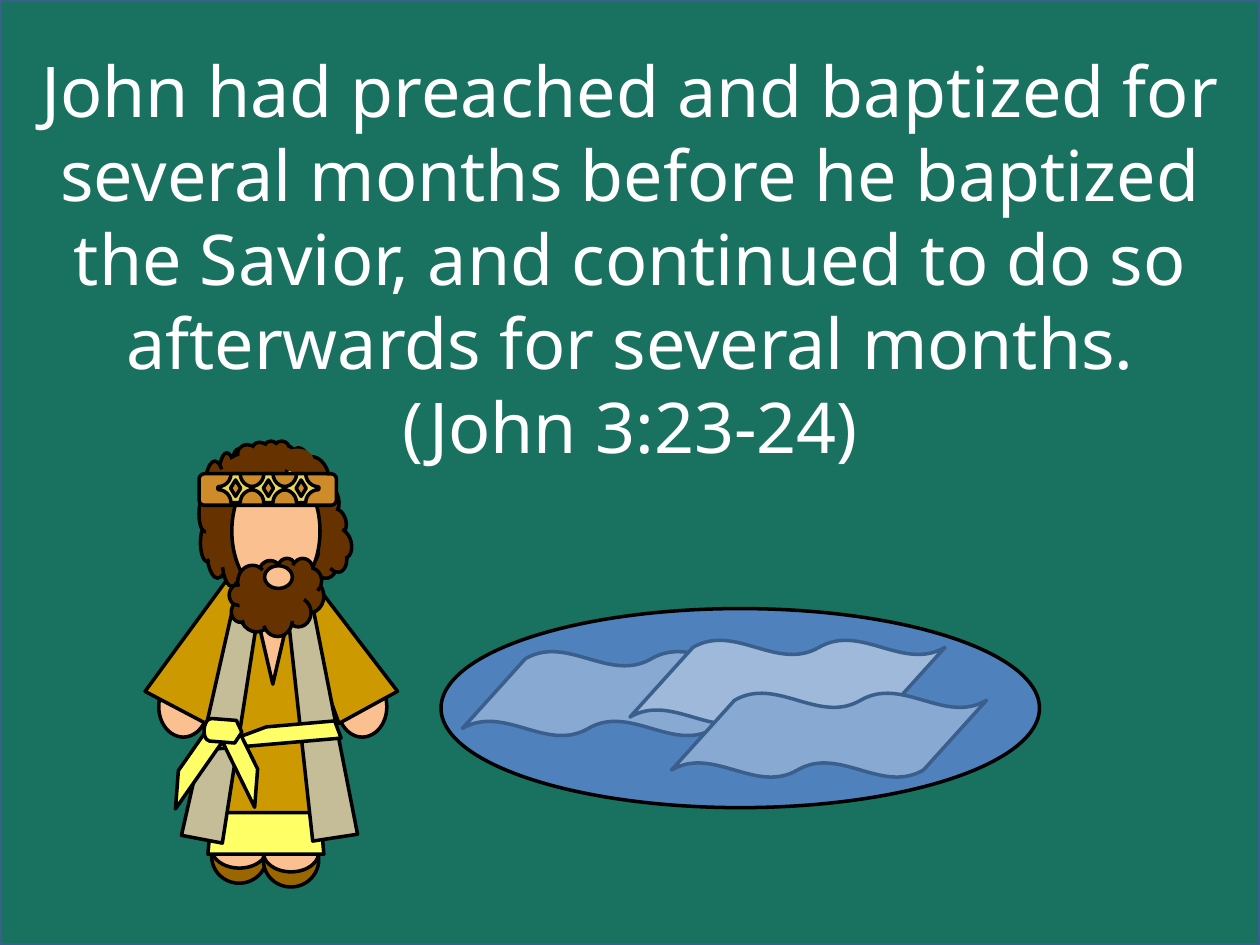
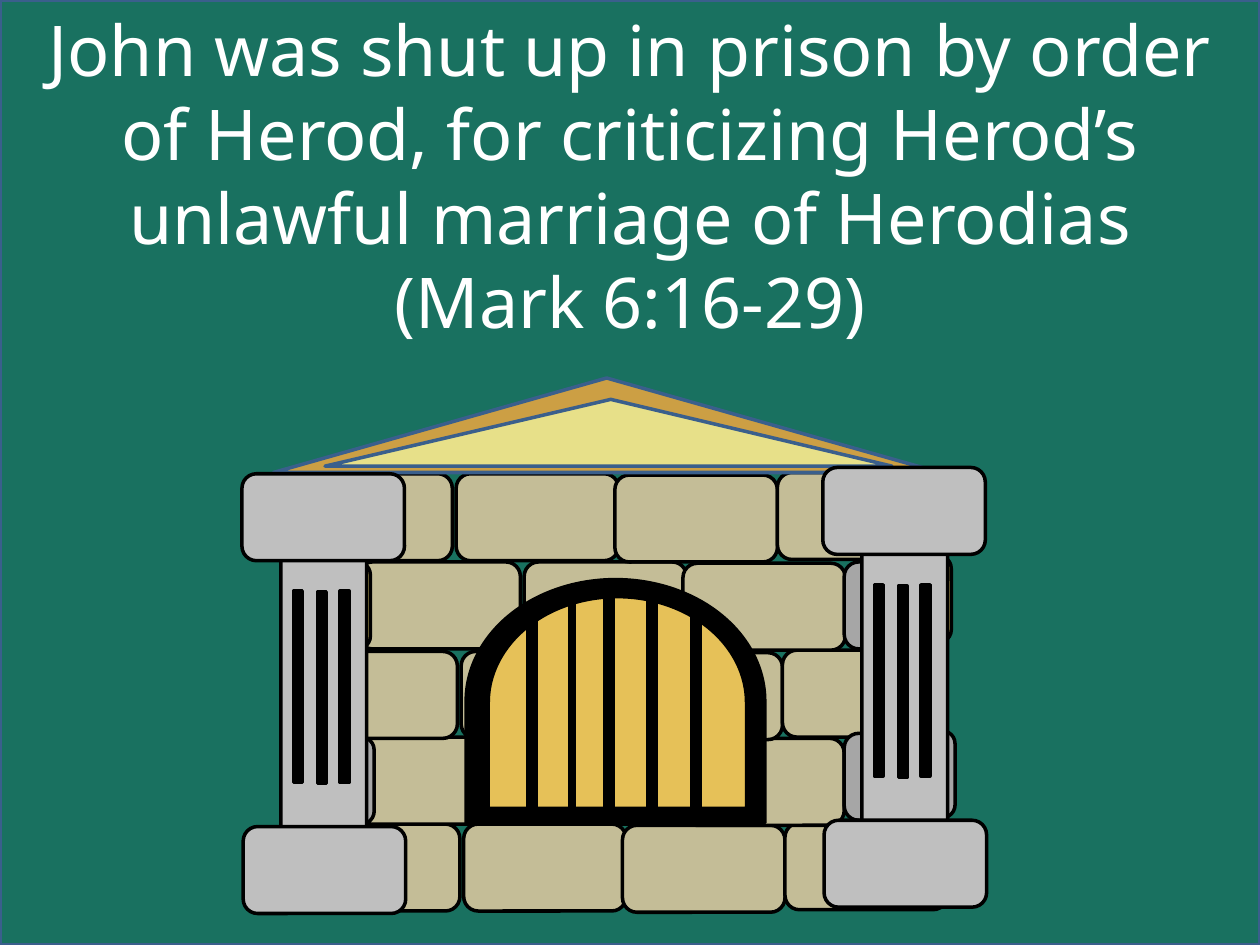
"""Build two Bible story slides about John: baptizing, and shut up in prison."""
import pptx
import pptx.dml.color
import pptx.enum.shapes
import pptx.enum.text
import pptx.util

Inches = pptx.util.Inches
KIND = pptx.enum.shapes.MSO_SHAPE
COLORS = {
    "board": "197160", "edge": "3A5F8C", "black": "000000", "white": "FFFFFF",
    "water": "4F81BD", "wave": "88A9D2", "crest": "9EB9DA",
    "skin": "FAC090", "sandal": "996600", "robe": "CC9900", "sash": "FFFF66",
    "hair": "663300", "stone": "C4BD97", "band": "CD8B29", "gem": "E7D65B",
    "shade": "A6A6A6", "pillar": "BFBFBF", "glow": "E6C158", "amber": "EAD26C",
    "roof": "CC9F44", "gable": "E7E089",
}
FONT = "Noto Sans"


def add_shape(shapes, kind, left, top, width, height, fill, line="black",
              turn=0, flip=False, adjust=()):
    shape = shapes.add_shape(kind, Inches(left), Inches(top), Inches(width), Inches(height))
    shape.shadow.inherit = False
    shape.fill.solid()
    shape.fill.fore_color.rgb = pptx.dml.color.RGBColor.from_string(COLORS[fill])
    if line:
        shape.line.color.rgb = pptx.dml.color.RGBColor.from_string(COLORS[line])
        shape.line.width = pptx.util.Pt(2)
    else:
        shape.line.fill.background()
    shape.rotation = turn
    if flip:
        shape.element.spPr.xfrm.set("flipH", "1")
    for index, value in enumerate(adjust):
        shape.adjustments[index] = value


def add_text(page, lines, top, height, size=40, color="white"):
    box = page.shapes.add_textbox(0, Inches(top), Inches(10), Inches(height))
    frame = box.text_frame
    frame.word_wrap = True
    frame.auto_size = pptx.enum.text.MSO_AUTO_SIZE.SHAPE_TO_FIT_TEXT
    for index, line in enumerate(lines):
        para = frame.add_paragraph() if index else frame.paragraphs[0]
        para.alignment = pptx.enum.text.PP_ALIGN.CENTER
        span = para.add_run()
        span.text = line
        span.font.size = pptx.util.Pt(size)
        span.font.name = FONT
        span.font.color.rgb = pptx.dml.color.RGBColor.from_string(COLORS[color])


deck = pptx.Presentation()
deck.slide_width = Inches(10)
deck.slide_height = Inches(7.5)

stories = [
    (["John had preached and baptized for several months before he baptized "
      "the Savior, and continued to do so afterwards for several months.",
      "(John 3:23-24)"], 0.33, 3.47),
    (["John was shut up in prison by order of Herod, for criticizing Herod’s "
      "unlawful marriage of Herodias",
      "(Mark 6:16-29)"], 0, 2.79),
]
pages = []
for lines, top, height in stories:
    page = deck.slides.add_slide(deck.slide_layouts[6])
    add_shape(page.shapes, KIND.RECTANGLE, 0, 0, 10, 7.5, "board", line="edge")
    add_text(page, lines, top, height)
    pages.append(page)
river_page, prison_page = pages

add_shape(river_page.shapes, KIND.OVAL, 3.5, 4.83, 4.75, 1.58, "water")
for left, top, fill in [(3.67, 5.17, "wave"), (5, 5.08, "crest"), (5.33, 5.5, "wave")]:
    add_shape(river_page.shapes, KIND.DOUBLE_WAVE, left, top, 2.5, 0.67, fill,
              line="edge", adjust=(0.087, -0.1))

john = river_page.shapes.add_group_shape().shapes
for left in (2.68, 1.26):
    add_shape(john, KIND.OVAL, left, 5.37, 0.39, 0.48, "skin")
for left, top in [(1.68, 6.58), (2.09, 6.61)]:
    add_shape(john, KIND.OVAL, left, top, 0.44, 0.43, "sandal", turn=351.2)
    add_shape(john, KIND.OVAL, left, top, 0.44, 0.31, "skin")

garments = [
    (1.65, 6.01, 0.92, 0.77, "sash", 0, 0.087),
    (2.36, 4.45, 0.53, 1.24, "robe", 331.3, 0.36),
    (1.44, 4.32, 0.57, 1.38, "robe", 27.8, 0.36),
    (1.65, 4.46, 1.03, 1.99, "robe", 0, 0.36),
]
for left, top, width, height, fill, turn, slant in garments:
    add_shape(john, KIND.TRAPEZOID, left, top, width, height, fill, turn=turn, adjust=(slant,))
add_shape(john, KIND.ISOSCELES_TRIANGLE, 1.97, 4.59, 0.39, 0.84, "skin", turn=180)
add_shape(john, KIND.CLOUD, 1.94, 3.82, 1.06, 0.51, "hair", turn=76.1)
add_shape(john, KIND.CLOUD, 1.58, 3.56, 0.51, 1.09, "hair")
add_shape(john, KIND.OVAL, 2.07, 4.4, 0.35, 0.44, "skin")
add_shape(john, KIND.TRAPEZOID, 1.64, 4.52, 0.33, 2.16, "stone", turn=10.8, adjust=(0.221,))
add_shape(john, KIND.TRAPEZOID, 2.32, 4.54, 0.36, 2.12, "stone", turn=351.3, adjust=(0.25,))

sash_strips = [
    (1.64, 5.76, 1.05, 0.29, 339.6, True),
    (1.29, 5.95, 0.61, 0.36, 274.4, True),
    (1.56, 5.91, 0.61, 0.36, 94.4, False),
]
for left, top, width, height, turn, flip in sash_strips:
    add_shape(john, KIND.DIAGONAL_STRIPE, left, top, width, height, "sash", turn=turn, flip=flip)
add_shape(john, KIND.FLOWCHART_DISPLAY, 1.62, 5.71, 0.3, 0.18, "sash", turn=4.4, flip=True)

add_shape(john, KIND.OVAL, 1.84, 3.69, 0.7, 1.05, "skin")
add_shape(john, KIND.CLOUD, 1.82, 4.43, 0.75, 0.62, "hair")
add_shape(john, KIND.OVAL, 2.1, 4.49, 0.22, 0.18, "skin")
add_shape(john, KIND.CLOUD, 1.84, 3.5, 0.51, 0.32, "hair")
for left, top in [(1.78, 3.63), (2.23, 3.56)]:
    add_shape(john, KIND.OVAL, left, top, 0.26, 0.19, "hair", line=None)
add_shape(john, KIND.ROUNDED_RECTANGLE, 1.58, 3.76, 1.09, 0.25, "band")
for gem in range(3):
    left = 1.73 + 0.26 * gem
    add_shape(john, KIND.PLAQUE, left, 3.76, 0.28, 0.23, "gem", adjust=(0.45,))
    add_shape(john, KIND.DIAMOND, left + 0.1, 3.81, 0.08, 0.13, "band")

prison = prison_page.shapes.add_group_shape().shapes
brick_offsets = [(0, 0), (1.32, 0), (2.58, 0.01), (3.87, -0.01)]
brick_rows = [(2.36, 6.54, 4), (2.83, 5.85, 3), (2.34, 5.17, 4), (2.84, 4.46, 3), (2.3, 3.76, 4)]
for row_left, row_top, count in brick_rows:
    for across, down in brick_offsets[:count]:
        add_shape(prison, KIND.ROUNDED_RECTANGLE, row_left + across, row_top + down,
                  1.29, 0.69, "stone")
for top in (4.46, 5.82):
    add_shape(prison, KIND.ROUNDED_RECTANGLE, 6.7, top, 0.78, 0.69, "shade")

add_shape(prison, KIND.FLOWCHART_DELAY, 3.92, 4.38, 1.93, 2.37, "black", turn=270)
add_shape(prison, KIND.FLOWCHART_DELAY, 4.06, 4.55, 1.68, 2.05, "glow", turn=270)
door_bars = [(4.19, 4.89, 0.07, 1.52), (4.52, 4.79, 0.04, 1.65), (4.8, 4.72, 0.07, 1.75),
             (5.14, 4.75, 0.07, 1.75), (5.49, 4.78, 0.07, 1.75)]
for left, top, width, height in door_bars:
    add_shape(prison, KIND.RECTANGLE, left, top, width, height, "black")

add_shape(prison, KIND.ISOSCELES_TRIANGLE, 2.17, 3, 5.29, 0.75, "roof", line="edge")
add_shape(prison, KIND.ISOSCELES_TRIANGLE, 2.58, 3.17, 4.5, 0.53, "gable", line="edge",
          adjust=(0.504,))

pillar_blocks = [
    (2.33, 4.46, 0.61, 0.69, "amber"),
    (2.36, 5.85, 0.61, 0.69, "shade"),
    (2.23, 3.92, 0.68, 3.31, "pillar"),
    (1.92, 3.76, 1.29, 0.69, "pillar"),
    (1.93, 6.56, 1.29, 0.69, "pillar"),
]
grooves = [(2.33, 4.69), (2.52, 4.7), (2.7, 4.69)]
for across, down in [(0, 0), (4.61, -0.05)]:
    for left, top, width, height, fill in pillar_blocks:
        add_shape(prison, KIND.ROUNDED_RECTANGLE, left + across, top + down, width, height, fill)
    for left, top in grooves:
        add_shape(prison, KIND.RECTANGLE, left + across, top + down, 0.07, 1.52, "black")

deck.save("out.pptx")
